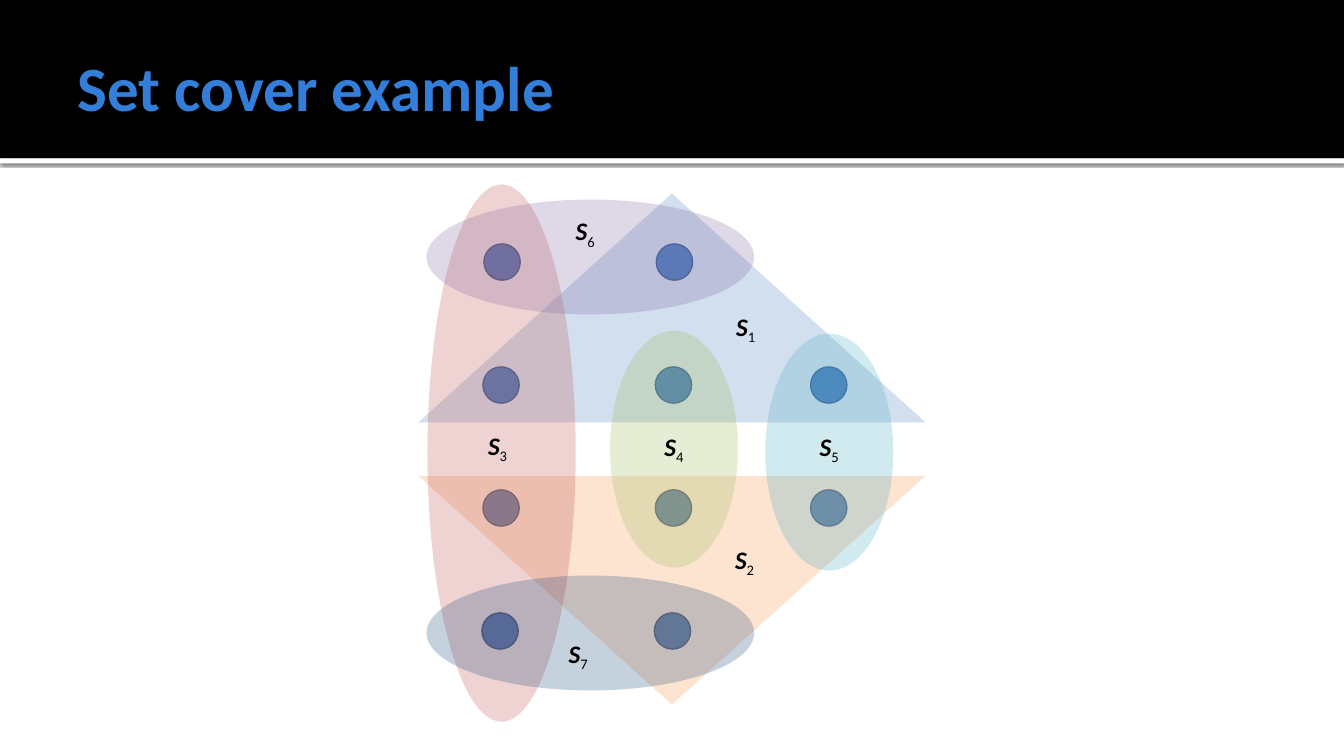
from lxml import etree
from pptx import Presentation
from pptx.dml.color import RGBColor
from pptx.enum import shapes, text
from pptx.oxml import ns
from pptx.util import Inches, Pt

HUES = {
    "black": "000000", "white": "FFFFFF", "title": "337ED9",
    "blue": "4F81BD", "edge": "3A5F8C", "orange": "F79646",
    "red": "C0504D", "green": "9BBB59", "aqua": "4BACC6",
    "purple": "8064A2", "navy": "1F497D",
}
TITLE = "Set cover example"
FONT = "Calibri"
KIND = shapes.MSO_SHAPE
OVAL, PEAK = KIND.OVAL, KIND.ISOSCELES_TRIANGLE
SETS = [
    ("1", PEAK, "blue", (4.15, 1.92, 5.03, 2.27), 0, (6.99, 3.04)),
    ("2", PEAK, "orange", (4.15, 4.72, 5.03, 2.27), 180, (6.98, 5.35)),
    ("3", OVAL, "red", (4.24, 1.83, 1.47, 5.33), 0, (4.53, 4.22)),
    ("4", OVAL, "green", (6.05, 3.28, 1.27, 2.35), 0, (6.28, 4.23)),
    ("5", OVAL, "aqua", (7.59, 3.31, 1.27, 2.35), 0, (7.82, 4.23)),
    ("6", OVAL, "purple", (4.23, 1.98, 3.25, 1.14), 0, (5.4, 2.09)),
    ("7", OVAL, "navy", (4.23, 5.71, 3.25, 1.14), 0, (5.33, 6.28)),
]
COLS = [4.79, 6.5, 8.04]
ROWS = [(2, 0.01), (3, 0), (3, 0), (2, -0.01)]
TOP, STEP, DOT = 2.42, 1.22, 0.36
LABEL = (0.81, 0.45)

deck = Presentation()
deck.slide_width, deck.slide_height = Inches(13.33), Inches(7.5)
slide = deck.slides.add_slide(deck.slide_layouts[6])


def hue(name):
    return RGBColor.from_string(HUES[name])


def add_node(parent, tag, **attrs):
    node = etree.SubElement(parent, ns.qn(tag))
    for key, val in attrs.items():
        node.set(key, str(val))
    return node


def draw(kind, box, fill, edge=None, alpha=None, turn=0):
    shape = slide.shapes.add_shape(kind, *map(Inches, box))
    shape.shadow.inherit = False
    shape.rotation = turn
    shape.fill.solid()
    shape.fill.fore_color.rgb = hue(fill)
    if alpha:
        tint = shape.fill._xPr.find(".//" + ns.qn("a:srgbClr"))
        add_node(tint, "a:alpha", val=alpha * 1000)
    if edge:
        shape.line.color.rgb = hue(edge)
        shape.line.width = Pt(1)
    else:
        shape.line.fill.background()
    return shape


def write(words, box, size, color, sub="", italic=False, align=None,
          anchor=text.MSO_ANCHOR.TOP, right=0.1):
    frame = slide.shapes.add_textbox(*map(Inches, box)).text_frame
    frame.word_wrap = True
    frame.vertical_anchor = anchor
    frame.margin_right = Inches(right)
    para = frame.paragraphs[0]
    para.alignment = align
    for part, low in ((words, False), (sub, True)):
        if not part:
            continue
        run = para.add_run()
        run.text = part
        run.font.name, run.font.size = FONT, Pt(size)
        run.font.color.rgb = hue(color)
        run.font.bold = not low
        run.font.italic = italic and not low
        if low:
            run.font._element.set("baseline", "-25000")


def main():
    strip = draw(KIND.RECTANGLE, (0, 1.57, 13.33, 0.05), "white")
    glow = strip._element.spPr.find(ns.qn("a:effectLst"))
    cast = add_node(glow, "a:outerShdw", blurRad=Pt(2.5), dist=Pt(0.8),
                    dir=5400000, algn="t", rotWithShape=0)
    tint = add_node(cast, "a:srgbClr", val=HUES["black"])
    add_node(tint, "a:alpha", val=60000)
    draw(KIND.RECTANGLE, (0, 0, 13.33, 1.57), "black")
    write(TITLE, (0.67, 0.17, 12, 1.37), 45, "title",
          anchor=text.MSO_ANCHOR.MIDDLE, right=0.05)

    for row, (count, shift) in enumerate(ROWS):
        for left in COLS[:count]:
            box = (left + shift, TOP + row * STEP, DOT, DOT)
            draw(OVAL, box, "blue", edge="edge")

    for _, kind, fill, box, turn, _ in SETS:
        draw(kind, box, fill, alpha=25, turn=turn)
    for num, _, _, _, _, spot in SETS:
        write("S", spot + LABEL, 18, "black", sub=num, italic=True,
              align=text.PP_ALIGN.CENTER)

    deck.save("out.pptx")


if __name__ == "__main__":
    main()
